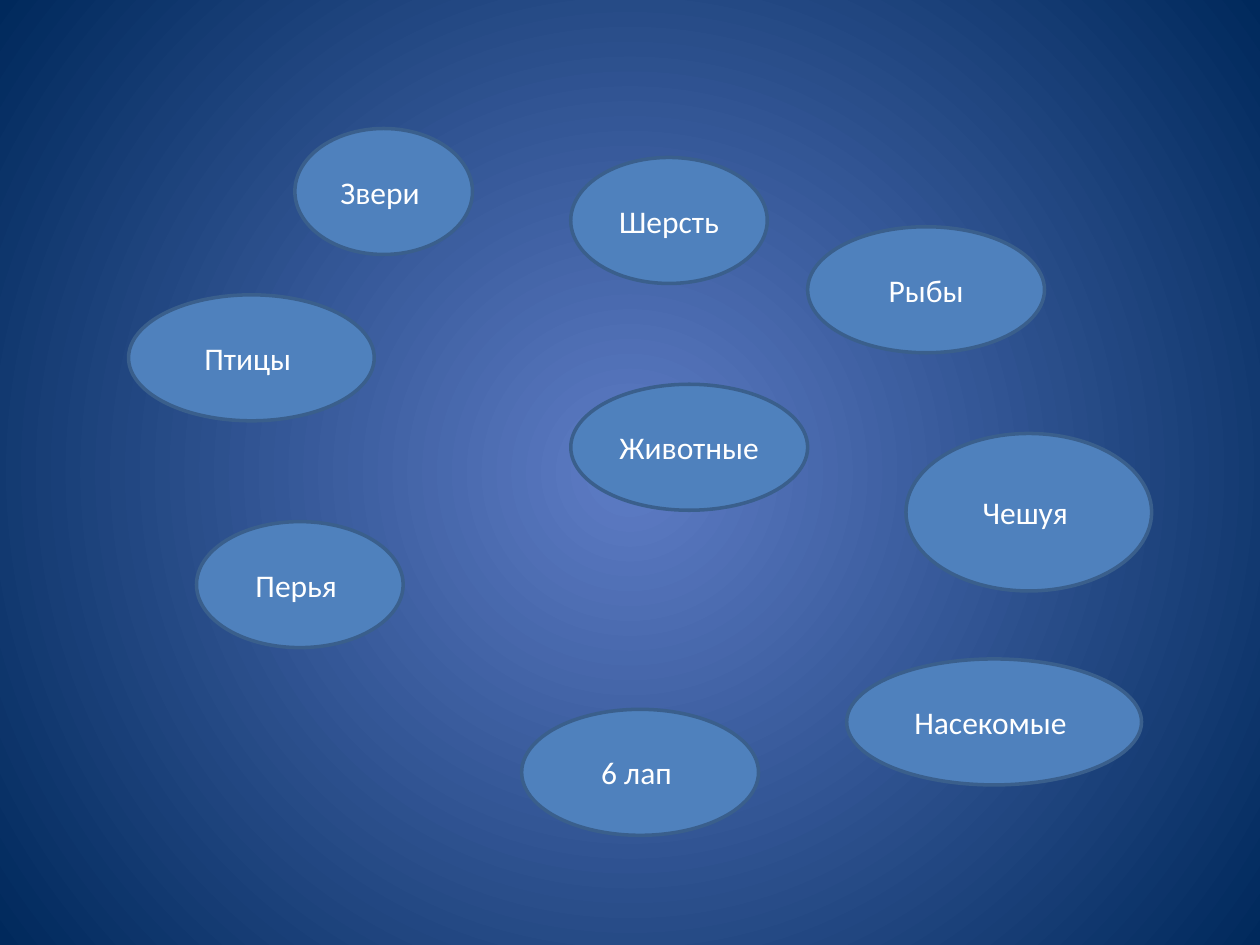
from lxml.etree import SubElement
from pptx import Presentation
from pptx.dml.color import RGBColor
from pptx.enum.shapes import MSO_SHAPE
from pptx.enum.text import MSO_ANCHOR, PP_ALIGN
from pptx.oxml.ns import qn
from pptx.util import Inches, Pt

COLORS = {
    "glow": "5E7CC5",
    "edge": "00295C",
    "oval": "4F81BD",
    "outline": "3A5F8C",
    "text": "FFFFFF",
}

prs = Presentation()
prs.slide_width = Inches(10)
prs.slide_height = Inches(7.5)
slide = prs.slides.add_slide(prs.slide_layouts[6])

background = slide.background.fill
background.gradient()
for stop, position, color in zip(background.gradient_stops, (0, 1), ("glow", "edge")):
    stop.position = position
    stop.color.rgb = RGBColor.from_string(COLORS[color])

gradient = slide.element.find(".//" + qn("a:gradFill"))
gradient.remove(gradient.find(qn("a:lin")))
radial = SubElement(gradient, qn("a:path"), {"path": "circle"})
SubElement(radial, qn("a:fillToRect"), {side: "50000" for side in "ltrb"})

concepts = [
    ("Животные ", 4.53, 3.05, 1.88, 1),
    ("Шерсть", 4.53, 1.25, 1.56, 1),
    ("Рыбы", 6.41, 1.8, 1.88, 1),
    ("Чешуя ", 7.19, 3.44, 1.95, 1.25),
    ("Насекомые ", 6.72, 5.23, 2.34, 1),
    ("6 лап ", 4.14, 5.63, 1.88, 1),
    ("Перья ", 1.56, 4.14, 1.64, 1),
    ("Птицы ", 1.02, 2.34, 1.95, 1),
    ("Звери ", 2.34, 1.02, 1.41, 1),
]

for word, *box in concepts:
    concept = slide.shapes.add_shape(MSO_SHAPE.OVAL, *map(Inches, box))
    concept.shadow.inherit = False
    concept.fill.solid()
    concept.fill.fore_color.rgb = RGBColor.from_string(COLORS["oval"])
    concept.line.color.rgb = RGBColor.from_string(COLORS["outline"])
    concept.line.width = Pt(2)
    concept.text_frame.word_wrap = True
    concept.text_frame.vertical_anchor = MSO_ANCHOR.MIDDLE
    label = concept.text_frame.paragraphs[0]
    label.alignment = PP_ALIGN.CENTER
    run = label.add_run()
    run.text = word
    run.font.name = "Calibri"
    run.font.size = Pt(18)
    run.font.color.rgb = RGBColor.from_string(COLORS["text"])

prs.save("out.pptx")
